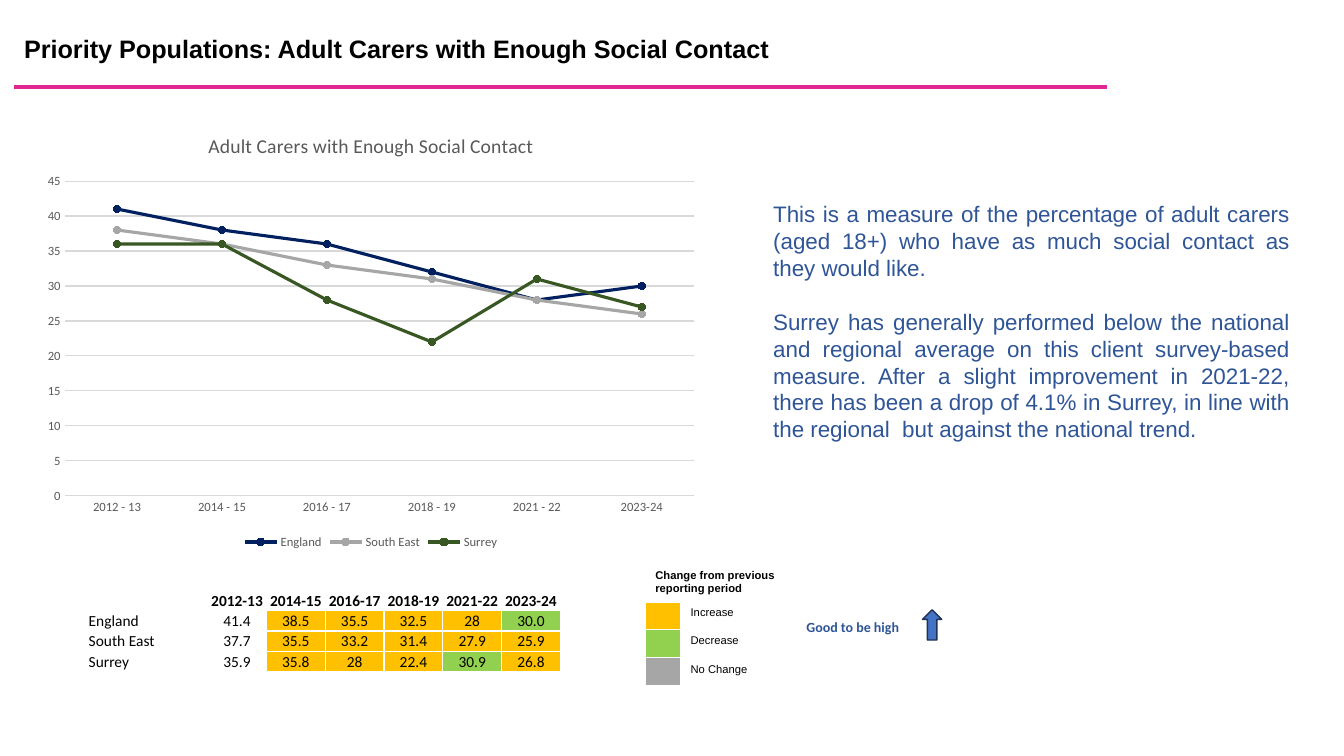
from dataclasses import dataclass

from lxml import etree
from pptx import Presentation
from pptx.chart.data import CategoryChartData
from pptx.dml.color import RGBColor as RGB
from pptx.enum.chart import XL_CHART_TYPE as CT, XL_LEGEND_POSITION as LP
from pptx.enum.chart import XL_MARKER_STYLE as MS, XL_TICK_MARK as TM
from pptx.enum.shapes import MSO_CONNECTOR as CONN, MSO_SHAPE as SHAPE
from pptx.enum.text import MSO_ANCHOR as ANCHOR, PP_ALIGN as ALIGN
from pptx.oxml.ns import qn
from pptx.util import Inches, Pt


@dataclass(frozen=True)
class Theme:
    sans: str = "Arial"
    data: str = "Calibri"
    black: str = "000000"
    white: str = "FFFFFF"
    blue: str = "2F5597"
    pink: str = "E22691"
    arrow: str = "4472C4"
    arrow_line: str = "1E3256"
    amber: str = "FFC000"
    green: str = "92D050"
    grey: str = "A6A6A6"
    chart_text: str = "595959"
    grid: str = "D9D9D9"
    title: int = 18
    body: int = 16
    chart_title: int = 14
    table: int = 11
    note: int = 10
    axis: int = 9
    key: int = 8


T = Theme()
YEARS = ["2012-13", "2014-15", "2016-17", "2018-19", "2021-22", "2023-24"]
CHART_YEARS = [y.replace("-", " - ") for y in YEARS[:-1]] + YEARS[-1:]
AREAS = [
    ("England", "002060", ["41.4", "38.5", "35.5", "32.5", "28", "30.0"]),
    ("South East", T.grey, ["37.7", "35.5", "33.2", "31.4", "27.9", "25.9"]),
    ("Surrey", "385723", ["35.9", "35.8", "28", "22.4", "30.9", "26.8"]),
]
KEY = [("Increase", T.amber), ("Decrease", T.green), ("No Change", T.grey)]
BODY = [
    "This is a measure of the percentage of adult carers (aged 18+) who have "
    "as much social contact as they would like.",
    "Surrey has generally performed below the national and regional average on "
    "this client survey-based measure. After a slight improvement in 2021-22, "
    "there has been a drop of 4.1% in Surrey, in line with the regional  but "
    "against the national trend.",
]


def style(font, name, size, color, bold=False):
    font.name, font.size, font.bold = name, Pt(size), bold
    font.color.rgb = RGB.from_string(color)


def write(p, text, *look):
    r = p.add_run()
    r.text = text
    style(r.font, *look)


def text_box(shapes, x, y, w, h):
    tf = shapes.add_textbox(Inches(x), Inches(y), Inches(w), Inches(h)).text_frame
    tf.word_wrap = True
    return tf


def add_header(s, x, y, w, h):
    tf = text_box(s.shapes, x, y, w, h)
    tf.vertical_anchor = ANCHOR.MIDDLE
    p = tf.paragraphs[0]
    p.line_spacing = 0.9
    write(p, "Priority Populations: Adult Carers with Enough Social Contact",
          T.sans, T.title, T.black, True)
    base = Inches(y + h - 0.07)
    rule = s.shapes.add_connector(CONN.STRAIGHT, Inches(x), base,
                                  Inches(x + 10.84), base)
    rule.line.color.rgb = RGB.from_string(T.pink)
    rule.line.width = Pt(3)
    etree.SubElement(rule._element.spPr, qn("a:effectLst"))


def add_commentary(s, x, y, w, h):
    tf = text_box(s.shapes, x, y, w, h)
    for i, text in enumerate(BODY):
        p = tf.add_paragraph() if i else tf.paragraphs[0]
        p.alignment = ALIGN.JUSTIFY
        p.space_before = Pt(19.2 * i)
        write(p, text, T.sans, T.body, T.blue)


def add_trend_chart(s, x, y, w, h):
    data = CategoryChartData()
    data.categories = CHART_YEARS
    for name, _, values in AREAS:
        data.add_series(name, [round(float(v)) for v in values])
    chart = s.shapes.add_chart(CT.LINE_MARKERS, Inches(x), Inches(y),
                               Inches(w), Inches(h), data).chart
    style(chart.font, T.data, T.note, T.black)
    chart.has_title = True
    write(chart.chart_title.text_frame.paragraphs[0],
          "Adult Carers with Enough Social Contact",
          T.data, T.chart_title, T.chart_text)
    chart.has_legend = True
    chart.legend.position = LP.BOTTOM
    chart.legend.include_in_layout = False
    style(chart.legend.font, T.data, T.axis, T.chart_text)
    cat, val = chart.category_axis, chart.value_axis
    for axis in (cat, val):
        axis.major_tick_mark = axis.minor_tick_mark = TM.NONE
        style(axis.tick_labels.font, T.data, T.axis, T.chart_text)
    val.minimum_scale, val.maximum_scale, val.major_unit = 0, 45, 5
    val.format.line.fill.background()
    for line in (cat.format.line, val.major_gridlines.format.line):
        line.color.rgb = RGB.from_string(T.grid)
        line.width = Pt(0.75)
    chart.plots[0].vary_by_categories = False
    for series, (_, color, _) in zip(chart.plots[0].series, AREAS):
        rgb = RGB.from_string(color)
        series.smooth = False
        series.format.line.color.rgb = rgb
        series.format.line.width = Pt(2.25)
        series.marker.style, series.marker.size = MS.CIRCLE, 5
        series.marker.format.fill.solid()
        series.marker.format.fill.fore_color.rgb = rgb
        series.marker.format.line.color.rgb = rgb


def add_grid(s, x, y, widths, heights):
    table = s.shapes.add_table(len(heights), len(widths), Inches(x), Inches(y),
                               Inches(sum(widths)), Inches(sum(heights))).table
    table.first_row = table.horz_banding = False
    for col, width in zip(table.columns, widths):
        col.width = Inches(width)
    for row, height in zip(table.rows, heights):
        row.height = Inches(height)
    return table


def fill_cell(cell, text, look, fill=None, bottom=1):
    tc_pr = cell._tc.get_or_add_tcPr()
    for side, width in (("L", 1), ("R", 1), ("T", 1), ("B", bottom)):
        ln = etree.SubElement(tc_pr, qn(f"a:ln{side}"), w=str(Pt(width)))
        solid = etree.SubElement(ln, qn("a:solidFill"))
        etree.SubElement(solid, qn("a:srgbClr"), val=T.white)
    if fill:
        cell.fill.solid()
        cell.fill.fore_color.rgb = RGB.from_string(fill)
    else:
        cell.fill.background()
    p = cell.text_frame.paragraphs[0]
    if text:
        write(p, text, *look)
    else:
        p._p.get_or_add_endParaRPr().set("sz", str(look[1] * 100))


def add_values_table(s, x, y, w):
    name_width = 1.19
    year_width = (w - name_width) / len(YEARS)
    table = add_grid(s, x, y, [name_width] + [year_width] * len(YEARS),
                     [0.2] * (len(AREAS) + 1))
    rows = [["", *YEARS]] + [[name, *values] for name, _, values in AREAS]
    for i, row in enumerate(rows):
        for j, text in enumerate(row):
            cell = table.cell(i, j)
            cell.margin_left = cell.margin_right = cell.margin_top = Inches(0.01)
            cell.margin_bottom = 0
            cell.vertical_anchor = ANCHOR.MIDDLE if j else ANCHOR.BOTTOM
            fill = None
            if i and j > 1:
                fill = T.green if float(text) > float(row[j - 1]) else T.amber
            fill_cell(cell, text, (T.data, T.table, T.black, i == 0), fill)
            if j:
                cell.text_frame.paragraphs[0].alignment = ALIGN.CENTER


def add_change_key(s, x, y):
    table = add_grid(s, x, y, [0.35, 1.24], [0.34] + [0.28] * len(KEY))
    look = (T.sans, T.key, T.black)
    table.cell(0, 0).merge(table.cell(0, 1))
    fill_cell(table.cell(0, 0), "Change from previous reporting period",
              (*look, True), bottom=3)
    for i, (label, color) in enumerate(KEY, 1):
        fill_cell(table.cell(i, 0), "", look, color)
        fill_cell(table.cell(i, 1), label, look)


def add_direction(s, x, y):
    group = s.shapes.add_group_shape()
    tf = text_box(group.shapes, x, y + 0.04, 1.25, 0.27)
    write(tf.paragraphs[0], "Good to be high", T.data, T.note, T.blue, True)
    arrow = group.shapes.add_shape(SHAPE.UP_ARROW, Inches(x + 1.25), Inches(y),
                                   Inches(0.19), Inches(0.3))
    arrow.shadow.inherit = False
    arrow.fill.solid()
    arrow.fill.fore_color.rgb = RGB.from_string(T.arrow)
    arrow.line.color.rgb = RGB.from_string(T.arrow_line)
    arrow.line.width = Pt(1)


def main():
    prs = Presentation()
    prs.slide_width, prs.slide_height = Inches(13.33), Inches(7.5)
    s = prs.slides.add_slide(prs.slide_layouts[6])
    add_commentary(s, 7.57, 1.94, 5.32, 2.52)
    add_header(s, 0.14, 0.07, 13, 0.86)
    add_direction(s, 7.9, 6.05)
    add_values_table(s, 0.87, 5.86, 4.69)
    add_trend_chart(s, 0.34, 1.14, 6.68, 4.35)
    add_change_key(s, 6.4, 5.6)
    prs.save("out.pptx")


if __name__ == "__main__":
    main()
